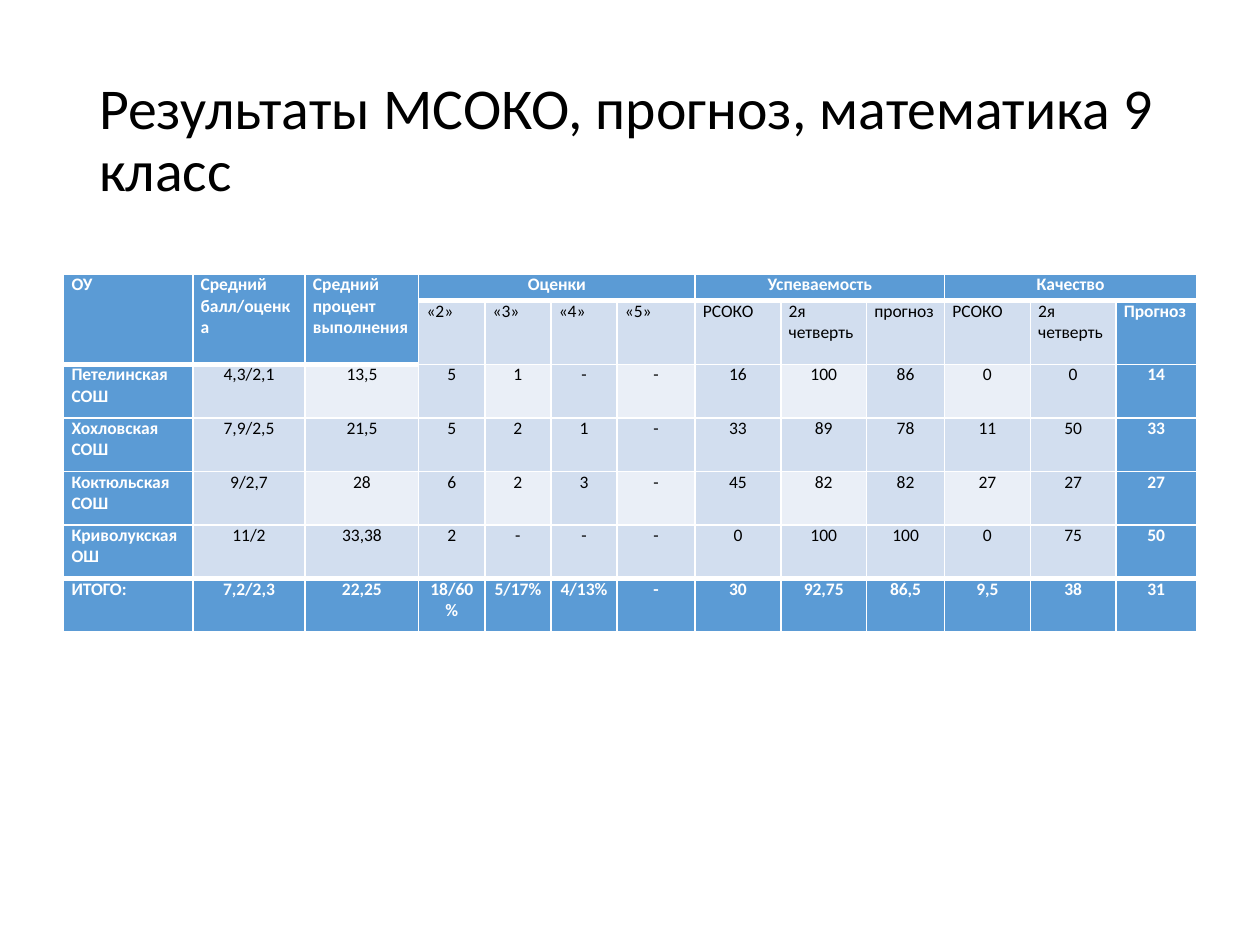
from lxml.etree import SubElement
from pptx import Presentation
from pptx.dml.color import RGBColor
from pptx.enum.text import MSO_ANCHOR, MSO_AUTO_SIZE, PP_ALIGN
from pptx.oxml.ns import qn
from pptx.util import Pt

BLUE = RGBColor(0x5B, 0x9B, 0xD5)
PALE = RGBColor(0xD2, 0xDE, 0xEF)
LIGHT = RGBColor(0xEA, 0xEF, 0xF7)
WHITE = RGBColor(0xFF, 0xFF, 0xFF)
BLACK = RGBColor(0, 0, 0)

ROWS = [
    ["ОУ", "Средний балл/оценка", "Средний процент выполнения", "Оценки", "", "", "",
     "Успеваемость", "", "", "Качество", "", ""],
    ["", "", "", "«2»", "«3»", "«4»", "«5»", "РСОКО", "2я четверть", "прогноз",
     "РСОКО", "2я четверть", "Прогноз"],
    ["Петелинская СОШ", "4,3/2,1", "13,5", "5", "1", "-", "-", "16", "100", "86", "0", "0", "14"],
    ["Хохловская СОШ", "7,9/2,5", "21,5", "5", "2", "1", "-", "33", "89", "78", "11", "50", "33"],
    ["Коктюльская СОШ", "9/2,7", "28", "6", "2", "3", "-", "45", "82", "82", "27", "27", "27"],
    ["Криволукская ОШ", "11/2", "33,38", "2", "-", "-", "-", "0", "100", "100", "0", "75", "50"],
    ["ИТОГО:", "7,2/2,3", "22,25", "18/60%", "5/17%", "4/13%", "-", "30", "92,75", "86,5",
     "9,5", "38", "31"],
]
WIDTHS = [73.8, 64.2, 64.9, 37.8, 37.8, 37.8, 44.6, 49, 49, 44.6, 49, 49, 46]
HEIGHTS = [15, 36] + [30.6] * 5
MERGES = [(0, 0, 1, 0), (0, 1, 1, 1), (0, 2, 1, 2), (0, 3, 0, 6), (0, 7, 0, 9), (0, 10, 0, 12)]


def style(font, size, color, bold):
    looks = {"name": "Calibri", "size": Pt(size), "bold": bold}
    for key, value in looks.items():
        setattr(font, key, value)
    font.color.rgb = color


def edge(props, side, width):
    line = SubElement(props, qn(f"a:{side}"), w=str(Pt(width)))
    fill = SubElement(line, qn("a:solidFill"))
    SubElement(fill, qn("a:srgbClr"), val=str(WHITE))


deck = Presentation()
deck.slide_width, deck.slide_height = Pt(720), Pt(540)
slide = deck.slides.add_slide(deck.slide_layouts[5])

title = slide.shapes.title
place = {"left": Pt(49.5), "top": Pt(28.75), "width": Pt(621), "height": Pt(104.4)}
for key, value in place.items():
    setattr(title, key, value)
frame = title.text_frame
frame.text = "Результаты МСОКО, прогноз, математика 9 класс"
frame.auto_size = MSO_AUTO_SIZE.NONE
frame.word_wrap = True
frame.vertical_anchor = MSO_ANCHOR.MIDDLE
para = frame.paragraphs[0]
para.alignment = PP_ALIGN.LEFT
para.line_spacing = 0.9
style(para.runs[0].font, 33, BLACK, False)

last = len(ROWS) - 1
end = len(WIDTHS) - 1
table = slide.shapes.add_table(
    len(ROWS), len(WIDTHS), Pt(36.4), Pt(156.8), Pt(sum(WIDTHS)), Pt(sum(HEIGHTS))).table
for col, width in zip(table.columns, WIDTHS):
    col.width = Pt(width)
for row, height in zip(table.rows, HEIGHTS):
    row.height = Pt(height)
for top, left, low, right in MERGES:
    table.cell(top, left).merge(table.cell(low, right))

for r, row in enumerate(ROWS):
    for c, text in enumerate(row):
        cell = table.cell(r, c)
        insets = {"margin_left": 4.5, "margin_right": 4.5, "margin_top": 0, "margin_bottom": 0}
        for key, value in insets.items():
            setattr(cell, key, Pt(value))

        head = r in (0, last) or c in (0, end) or (r == 1 and c < 3)
        props = cell._tc.get_or_add_tcPr()
        thick_top = r in (1, last) or (r == 2 and c < 3)
        thick_low = r in (0, last - 1) or (r == 1 and c < 3)
        edge(props, "lnL", 1)
        edge(props, "lnR", 1)
        edge(props, "lnT", 3 if thick_top else 1)
        edge(props, "lnB", 3 if thick_low else 1)
        cell.fill.solid()
        band = LIGHT if r in (2, 4) and c % 2 == 0 else PALE
        cell.fill.fore_color.rgb = BLUE if head else band

        if text:
            cell.text = text
            para = cell.text_frame.paragraphs[0]
            plain = c == 0 or r == 1 or (r == 0 and c < 3)
            para.alignment = PP_ALIGN.LEFT if plain else PP_ALIGN.CENTER
            style(para.runs[0].font, 10, WHITE if head else BLACK, head)

deck.save("out.pptx")
